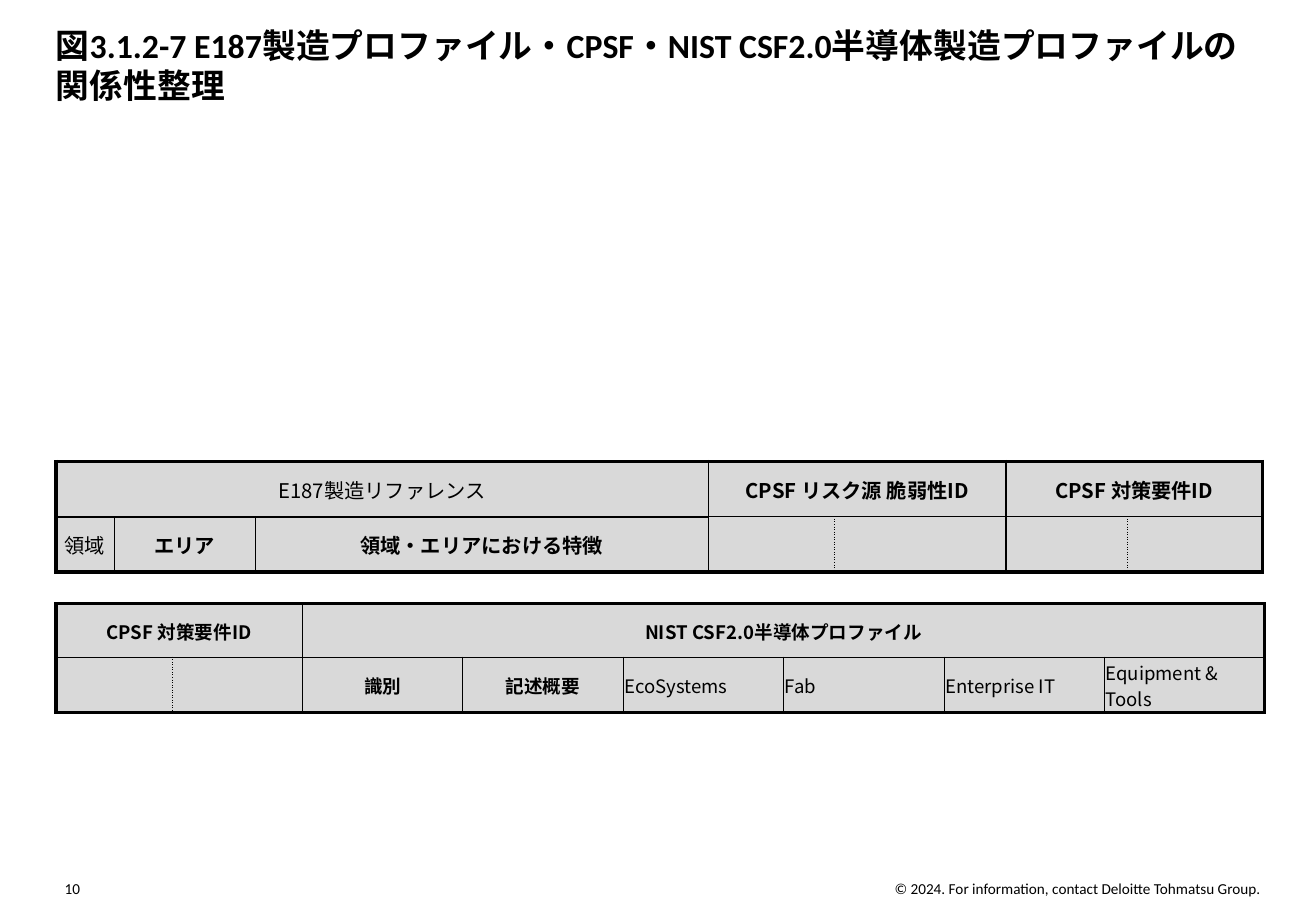
"""Build the slide relating the E187, CPSF and NIST CSF2.0 profiles."""
from dataclasses import dataclass

from pptx import Presentation
from pptx import util as u
from pptx.dml.color import RGBColor
from pptx.enum import text
from pptx.oxml import parse_xml
from pptx.oxml.ns import nsdecls, qn

BLACK, GREY = "000000", "D9D9D9"
THIN, MEDIUM, THICK = 0.5, 1, 2.25
LEFT, CENTER, RIGHT = text.PP_ALIGN.LEFT, text.PP_ALIGN.CENTER, text.PP_ALIGN.RIGHT
TABLE_LEFT, TABLE_WIDTH = 0.46, 9.92


@dataclass
class Column:
    label: str
    width: float
    bold: bool = True
    align: text.PP_ALIGN = CENTER


@dataclass
class Group:
    title: str
    columns: list[Column]
    bold: bool = True
    rule: float = THIN


@dataclass
class Grid:
    top: float
    height: float
    size: int
    groups: list[Group]


@dataclass
class Label:
    label: str
    left: float
    width: float


GRIDS = [
    Grid(3.8, 0.91, 12, [
        Group("E187製造リファレンス", [
            Column("領域", 0.48, False),
            Column("エリア", 1.16),
            Column("領域・エリアにおける特徴", 3.73),
        ], False, MEDIUM),
        Group("CPSF リスク源 脆弱性ID", [Column("", 1.04), Column("", 1.41)]),
        Group("CPSF 対策要件ID", [Column("", 1), Column("", 1.11)]),
    ]),
    Grid(4.97, 0.88, 11, [
        Group("CPSF 対策要件ID", [Column("", 0.96), Column("", 1.07)]),
        Group("NIST CSF2.0半導体プロファイル", [
            Column("識別", 1.32),
            Column("記述概要", 1.32),
            *(Column(name, 1.32, False, LEFT)
              for name in ("EcoSystems", "Fab", "Enterprise IT", "Equipment & Tools")),
        ]),
    ]),
]
FOOTERS = [
    Label("© 2024. For information, contact Deloitte Tohmatsu Group.", 5.61, 4.76),
    Label("10", 0.46, 0.2),
]


def color(target, value: str) -> None:
    """Give a fill or font a solid colour."""
    if hasattr(target, "solid"):
        target.solid()
        target.fore_color.rgb = RGBColor.from_string(value)
    else:
        target.color.rgb = RGBColor.from_string(value)


def write(tf, label: str, size: float, font: str, bold: bool, align) -> None:
    """Put one formatted paragraph in a text frame."""
    tf.text = label
    p = tf.paragraphs[0]
    p.alignment = align
    p.font.size, p.font.name, p.font.bold = u.Pt(size), font, bold
    color(p.font, BLACK)
    ea = parse_xml(f'<a:ea {nsdecls("a")} typeface="{font}"/>')
    p._p.pPr.find(qn("a:defRPr")).append(ea)


def frame(tf, wrap: bool) -> None:
    """Remove the insets and anchor the text at the bottom."""
    tf.margin_left = tf.margin_top = tf.margin_right = tf.margin_bottom = 0
    tf.vertical_anchor = text.MSO_ANCHOR.BOTTOM
    tf.auto_size = text.MSO_AUTO_SIZE.NONE
    tf.word_wrap = wrap


def style_cell(cell, edges: dict[str, tuple[float, str]]) -> None:
    """Set the borders, insets and fill of a cell."""
    tc_pr = cell._tc.get_or_add_tcPr()
    for side in "LRTB":
        width, dash = edges[side]
        tc_pr.append(parse_xml(
            f'<a:ln{side} {nsdecls("a")} w="{u.Pt(width)}"><a:solidFill>'
            f'<a:srgbClr val="{BLACK}"/></a:solidFill><a:prstDash val="{dash}"/></a:ln{side}>'))
    cell.margin_left = cell.margin_top = cell.margin_right = u.Inches(0.01)
    cell.margin_bottom = 0
    cell.vertical_anchor = text.MSO_ANCHOR.MIDDLE
    color(cell.fill, GREY)


def draw_grid(s, grid: Grid) -> None:
    """Draw a two-row table of grouped column headings."""
    total = sum(len(group.columns) for group in grid.groups)
    table = s.shapes.add_table(2, total, u.Inches(TABLE_LEFT), u.Inches(grid.top),
                               u.Inches(TABLE_WIDTH), u.Inches(grid.height)).table
    table.first_row = table.horz_banding = False
    start = 0
    for group in grid.groups:
        end = start + len(group.columns)
        left = (MEDIUM if start else THICK, "solid")
        right = (MEDIUM if end < total else THICK, "solid")
        outer, rule = (THICK, "solid"), (group.rule, "solid")
        for i, column in enumerate(group.columns, start):
            table.columns[i].width = u.Inches(column.width)
            style_cell(table.cell(0, i), {"L": left, "R": right, "T": outer, "B": rule})
            inner = (THIN, "solid" if column.label else "sysDot")
            style_cell(table.cell(1, i), {
                "L": left if i == start else inner,
                "R": right if i == end - 1 else inner,
                "T": rule, "B": outer})
            if column.label:
                write(table.cell(1, i).text_frame, column.label, grid.size,
                      "Noto Sans CJK JP", column.bold, column.align)
        head = table.cell(0, start)
        head.merge(table.cell(0, end - 1))
        write(head.text_frame, group.title, grid.size, "Noto Sans CJK JP", group.bold, CENTER)
        start = end


def main() -> None:
    """Build and save the presentation."""
    prs = Presentation()
    prs.slide_width, prs.slide_height = u.Inches(10.83), u.Inches(7.5)
    s = prs.slides.add_slide(prs.slide_layouts[5])
    title = s.shapes.title
    title.left, title.top = u.Inches(TABLE_LEFT), u.Inches(0.2)
    title.width, title.height = u.Inches(TABLE_WIDTH), u.Inches(0.67)
    frame(title.text_frame, True)
    write(title.text_frame,
          "図3.1.2-7 E187製造プロファイル・CPSF・NIST CSF2.0半導体製造プロファイルの関係性整理",
          20, "Calibri", True, LEFT)
    for grid in GRIDS:
        draw_grid(s, grid)
    for footer in FOOTERS:
        sp = s.shapes.add_textbox(u.Inches(footer.left), u.Inches(7.2),
                                  u.Inches(footer.width), u.Inches(0.19))
        frame(sp.text_frame, False)
        write(sp.text_frame, footer.label, 9, "Calibri", False, RIGHT)
    prs.save("out.pptx")


if __name__ == "__main__":
    main()
